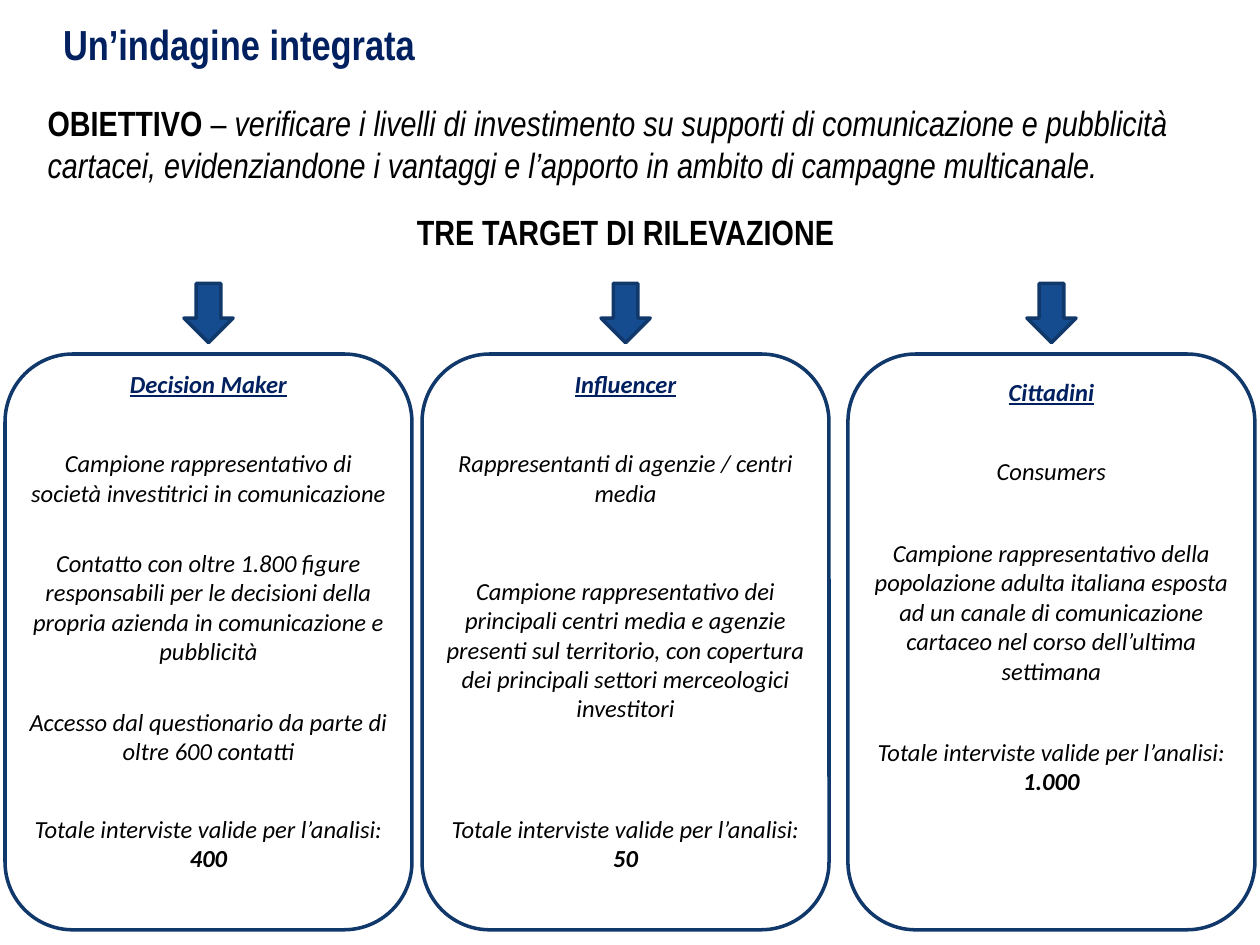
from pptx import Presentation
from pptx.dml.color import RGBColor
from pptx.enum.shapes import MSO_SHAPE as Shape
from pptx.enum.text import MSO_ANCHOR as Anchor, MSO_AUTO_SIZE as AutoSize, PP_ALIGN as Align
from pptx.util import Inches, Pt

THEME = {
    "navy": RGBColor(0x00, 0x20, 0x60),
    "black": RGBColor(0x00, 0x00, 0x00),
    "white": RGBColor(0xFF, 0xFF, 0xFF),
    "arrow": RGBColor(0x15, 0x4C, 0x8F),
    "outline": RGBColor(0x10, 0x38, 0x6A),
    "heading font": "Arial Narrow",
    "body font": "Calibri",
    "title size": 24,
    "lead size": 20,
    "body size": 14,
}

TITLE = "Un’indagine integrata"
OBJECTIVE = [
    ("OBIETTIVO", {"bold": True}),
    (" – ", {}),
    ("verificare i livelli di investimento su supporti di comunicazione e pubblicità "
     "cartacei, evidenziandone i vantaggi e l’apporto in ambito di campagne multicanale.",
     {"italic": True}),
]
TARGETS_HEADING = "TRE TARGET DI RILEVAZIONE"
TOTAL_LABEL = "Totale interviste valide per l’analisi: "

# Each note is (top, height, text); "total" is (top, number of interviews).
TARGETS = [
    {"left": 0.04, "name": "Decision Maker", "name top": 2.88, "total": (6.41, "400"),
     "notes": [
         (3.51, 0.57, "Campione rappresentativo di società investitrici in comunicazione"),
         (4.3, 1.04, "Contatto con oltre 1.800 figure responsabili per le decisioni della "
                     "propria azienda in comunicazione e pubblicità"),
         (5.56, 0.57, "Accesso dal questionario da parte di oltre 600 contatti")]},
    {"left": 3.35, "name": "Influencer", "name top": 2.88, "total": (6.41, "50"),
     "notes": [
         (3.51, 0.57, "Rappresentanti di agenzie / centri media"),
         (4.52, 1.28, "Campione rappresentativo dei principali centri media e agenzie presenti "
                      "sul territorio, con copertura dei principali settori merceologici "
                      "investitori")]},
    {"left": 6.73, "name": "Cittadini", "name top": 2.94, "total": (5.8, "1.000"),
     "notes": [
         (3.57, 0.34, "Consumers"),
         (4.22, 1.28, "Campione rappresentativo della popolazione adulta italiana esposta ad un "
                      "canale di comunicazione cartaceo nel corso dell’ultima settimana")]},
]

CARD_TOP, CARD_WIDTH, CARD_HEIGHT = 2.81, 3.23, 4.57
CARD_MARGIN = 0.08
ARROW_TOP, ARROW_WIDTH, ARROW_HEIGHT = 2.25, 0.39, 0.47


def write(box, spans, font="body font", size="body size", color="black", align=Align.CENTER):
    """Fill a shape with one paragraph made of (text, style) spans."""
    frame = box.text_frame
    frame.word_wrap = True
    frame.auto_size = AutoSize.NONE
    frame.vertical_anchor = Anchor.TOP
    para = frame.paragraphs[0]
    para.alignment = align
    para.space_before = Pt(0)
    for text, style in spans:
        span = para.add_run()
        span.text = text
        span.font.name = THEME[font]
        span.font.size = Pt(THEME[size])
        span.font.color.rgb = THEME[color]
        span.font.bold = style.get("bold", False)
        span.font.italic = style.get("italic", False)
        span.font.underline = style.get("underline", False)


def add_text(page, left, top, width, height, spans, **style):
    box = page.shapes.add_textbox(*map(Inches, (left, top, width, height)))
    write(box, spans, **style)


def add_shape(page, kind, left, top, width, height, fill=None, line=None):
    shape = page.shapes.add_shape(kind, *map(Inches, (left, top, width, height)))
    shape.shadow.inherit = False
    if fill:
        shape.fill.solid()
        shape.fill.fore_color.rgb = THEME[fill]
    else:
        shape.fill.background()
    if line:
        shape.line.color.rgb = THEME[line]
        shape.line.width = Pt(2)
    else:
        shape.line.fill.background()
    return shape


def add_target(page, target):
    """Draw one arrow and the card below it."""
    left = target["left"]
    add_shape(page, Shape.DOWN_ARROW, left + (CARD_WIDTH - ARROW_WIDTH) / 2, ARROW_TOP,
              ARROW_WIDTH, ARROW_HEIGHT, fill="arrow", line="outline")
    add_shape(page, Shape.ROUNDED_RECTANGLE, left, CARD_TOP, CARD_WIDTH, CARD_HEIGHT,
              line="outline")

    text_left, text_width = left + CARD_MARGIN, CARD_WIDTH - 2 * CARD_MARGIN
    italic = {"italic": True}
    strong = {"bold": True, "italic": True}
    add_text(page, text_left, target["name top"], text_width, 0.34,
             [(target["name"], {**strong, "underline": True})], color="navy")
    for top, height, text in target["notes"]:
        add_text(page, text_left, top, text_width, height, [(text, italic)])
    top, total = target["total"]
    add_text(page, text_left, top, text_width, 0.57, [(TOTAL_LABEL, italic), (total, strong)])


def main():
    deck = Presentation()
    deck.slide_width, deck.slide_height = Inches(10), Inches(7.5)
    page = deck.slides.add_slide(deck.slide_layouts.get_by_name("Title Only"))

    title = page.shapes.title
    title.left, title.top, title.width, title.height = map(Inches, (0.4, 0.1, 8.72, 0.5))
    write(title, [(TITLE, {"bold": True})], font="heading font", size="title size",
          color="navy", align=Align.LEFT)

    lead = {"font": "heading font", "size": "lead size"}
    add_text(page, 0.28, 0.76, 9.53, 0.77, OBJECTIVE, align=Align.LEFT, **lead)
    heading = add_shape(page, Shape.RECTANGLE, 0.2, 1.62, 9.53, 0.44, fill="white")
    write(heading, [(TARGETS_HEADING, {"bold": True})], **lead)

    for target in TARGETS:
        add_target(page, target)
    deck.save("out.pptx")


if __name__ == "__main__":
    main()
